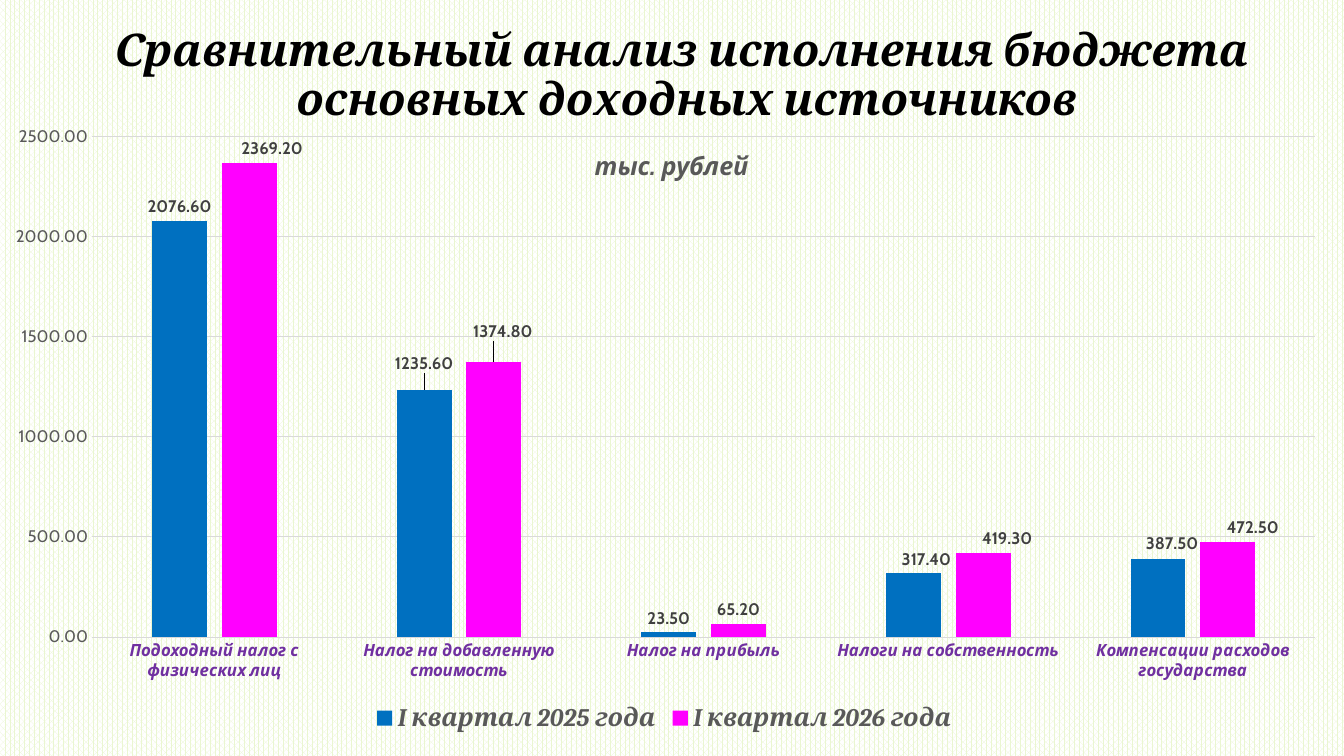
"""Build a slide comparing the main budget revenue sources of two quarters."""
from lxml.etree import SubElement
from pptx import Presentation
from pptx.chart.data import CategoryChartData
from pptx.dml.color import RGBColor
from pptx.enum.chart import XL_CHART_TYPE, XL_LABEL_POSITION, XL_LEGEND_POSITION, XL_TICK_MARK
from pptx.enum.dml import MSO_PATTERN
from pptx.enum.text import MSO_ANCHOR, PP_ALIGN
from pptx.oxml.ns import qn
from pptx.util import Pt

TITLE_LINES = ["Сравнительный анализ исполнения бюджета ", "основных доходных источников"]
UNIT = "тыс. рублей"
CATEGORIES = [
    "Подоходный налог с физических лиц",
    "Налог на добавленную стоимость",
    "Налог на прибыль",
    "Налоги на собственность",
    "Компенсации расходов государства",
]
SERIES = [
    {"name": "I квартал 2025 года", "color": "blue",
     "values": [2076.6, 1235.6, 23.5, 317.4, 387.5],
     "label_shifts": {1: (0, -12), 3: (13, 0), 4: (14, -2)}},
    {"name": "I квартал 2026 года", "color": "magenta",
     "values": [2369.2, 1374.8, 65.2, 419.3, 472.5],
     "label_shifts": {0: (23, 0), 1: (9, -16), 3: (24, 0), 4: (25, -1)}},
]
COLORS = {
    "black": "000000", "blue": "0070C0", "magenta": "FF00FF", "purple": "7030A0",
    "gray": "595959", "dark": "404040", "grid": "D9D9D9",
    "pattern": "EAF6D1", "white": "FFFFFF",
}
SLIDE_SIZE = (1344, 756)
TITLE_BOX = (15, 10, 1344, 133)
CHART_BOX = (11, 119, 1307, 619)
UNIT_POSITION = (579, 25)
PLOT_LAYOUT = {"x": 0.062, "y": 0.028, "w": 0.936, "h": 0.809}
NUMBER_FORMAT = "0.00"


def px(length):
    return round(length * 914400 / 100.8)


def color(name):
    return RGBColor.from_string(COLORS[name])


def style(font, size, color_name, name="Cabin", bold=False, italic=False):
    font.size = Pt(size)
    font.name = name
    font.bold = bold
    font.italic = italic
    font.color.rgb = color(color_name)


def style_line(line):
    line.color.rgb = color("grid")
    line.width = Pt(0.75)


def place(parent, index, fractions, inner=False):
    """Give a chart part a manual layout as fractions of the chart."""
    for old in parent.findall(qn("c:layout")):
        parent.remove(old)
    layout = SubElement(parent, qn("c:layout"))
    parent.insert(index, layout)
    manual = SubElement(layout, qn("c:manualLayout"))
    if inner:
        SubElement(manual, qn("c:layoutTarget")).set("val", "inner")
    if inner or "mode" in fractions:
        for tag in ("xMode", "yMode"):
            SubElement(manual, qn(f"c:{tag}")).set("val", "edge")
    for tag in "xywh":
        if tag in fractions:
            SubElement(manual, qn(f"c:{tag}")).set("val", str(round(fractions[tag], 4)))


def chart_fractions(x, y):
    return {"x": x / CHART_BOX[2], "y": y / CHART_BOX[3]}


def add_title(slide):
    title = slide.shapes.title
    title.left, title.top, title.width, title.height = map(px, TITLE_BOX)
    frame = title.text_frame
    frame.word_wrap = True
    frame.vertical_anchor = MSO_ANCHOR.MIDDLE
    para = frame.paragraphs[0]
    para.add_run().text = TITLE_LINES[0]
    para.add_line_break()
    para.add_run().text = TITLE_LINES[1]
    para.alignment = PP_ALIGN.CENTER
    para.line_spacing = 0.9
    style(para.font, 32, "black", "Cambria", True, True)


def format_axes(chart):
    for axis in (chart.category_axis, chart.value_axis):
        axis.major_tick_mark = axis.minor_tick_mark = XL_TICK_MARK.NONE
    style(chart.category_axis.tick_labels.font, 12, "purple", bold=True, italic=True)
    style_line(chart.category_axis.format.line)
    values = chart.value_axis
    values.minimum_scale, values.maximum_scale, values.major_unit = 0, 2500, 500
    values.format.line.fill.background()
    style(values.tick_labels.font, 12, "gray")
    values.tick_labels.number_format = NUMBER_FORMAT
    values.tick_labels.number_format_is_linked = False
    values.has_major_gridlines = True
    style_line(values.major_gridlines.format.line)


def format_series(series, content):
    series.format.fill.solid()
    series.format.fill.fore_color.rgb = color(content["color"])
    labels = series.data_labels
    labels.show_value = True
    labels.number_format = NUMBER_FORMAT
    labels.number_format_is_linked = False
    labels.position = XL_LABEL_POSITION.OUTSIDE_END
    style(labels.font, 12, "dark", bold=True)
    for index, shift in content["label_shifts"].items():
        label = series.points[index].data_label
        style(label.font, 12, "dark", bold=True)
        label.position = XL_LABEL_POSITION.OUTSIDE_END
        element = label._get_or_add_dLbl()
        place(element, 1, chart_fractions(*shift))
        number = SubElement(element, qn("c:numFmt"))
        number.set("formatCode", NUMBER_FORMAT)
        number.set("sourceLinked", "0")
        element.insert(2, number)


def add_revenue_chart(slide):
    data = CategoryChartData(number_format=NUMBER_FORMAT)
    data.categories = CATEGORIES
    for content in SERIES:
        data.add_series(content["name"], content["values"])
    chart = slide.shapes.add_chart(
        XL_CHART_TYPE.COLUMN_CLUSTERED, *map(px, CHART_BOX), data).chart
    style(chart.font, 10, "black")

    chart.has_title = True
    heading = chart.chart_title
    para = heading.text_frame.paragraphs[0]
    para.add_run().text = UNIT
    style(para.font, 18, "gray", bold=True, italic=True)
    heading.include_in_layout = False
    heading_element = heading._element
    place(heading_element, 1, {"mode": "edge", **chart_fractions(*UNIT_POSITION)})
    heading_element.find(qn("c:overlay")).set("val", "1")

    chart.has_legend = True
    chart.legend.position = XL_LEGEND_POSITION.BOTTOM
    chart.legend.include_in_layout = False
    style(chart.legend.font, 18, "gray", "Cambria", True, True)

    format_axes(chart)
    plot = chart.plots[0]
    plot.gap_width, plot.overlap, plot.vary_by_categories = 219, -27, False
    for series, content in zip(plot.series, SERIES):
        format_series(series, content)
    place(chart._chartSpace.chart.plotArea, 0, PLOT_LAYOUT, inner=True)


def main():
    deck = Presentation()
    deck.slide_width, deck.slide_height = map(px, SLIDE_SIZE)
    slide = deck.slides.add_slide(deck.slide_layouts[5])
    backdrop = slide.background.fill
    backdrop.patterned()
    backdrop.pattern = MSO_PATTERN.PERCENT_70
    backdrop.fore_color.rgb = color("pattern")
    backdrop.back_color.rgb = color("white")
    add_title(slide)
    add_revenue_chart(slide)
    deck.save("out.pptx")


if __name__ == "__main__":
    main()
